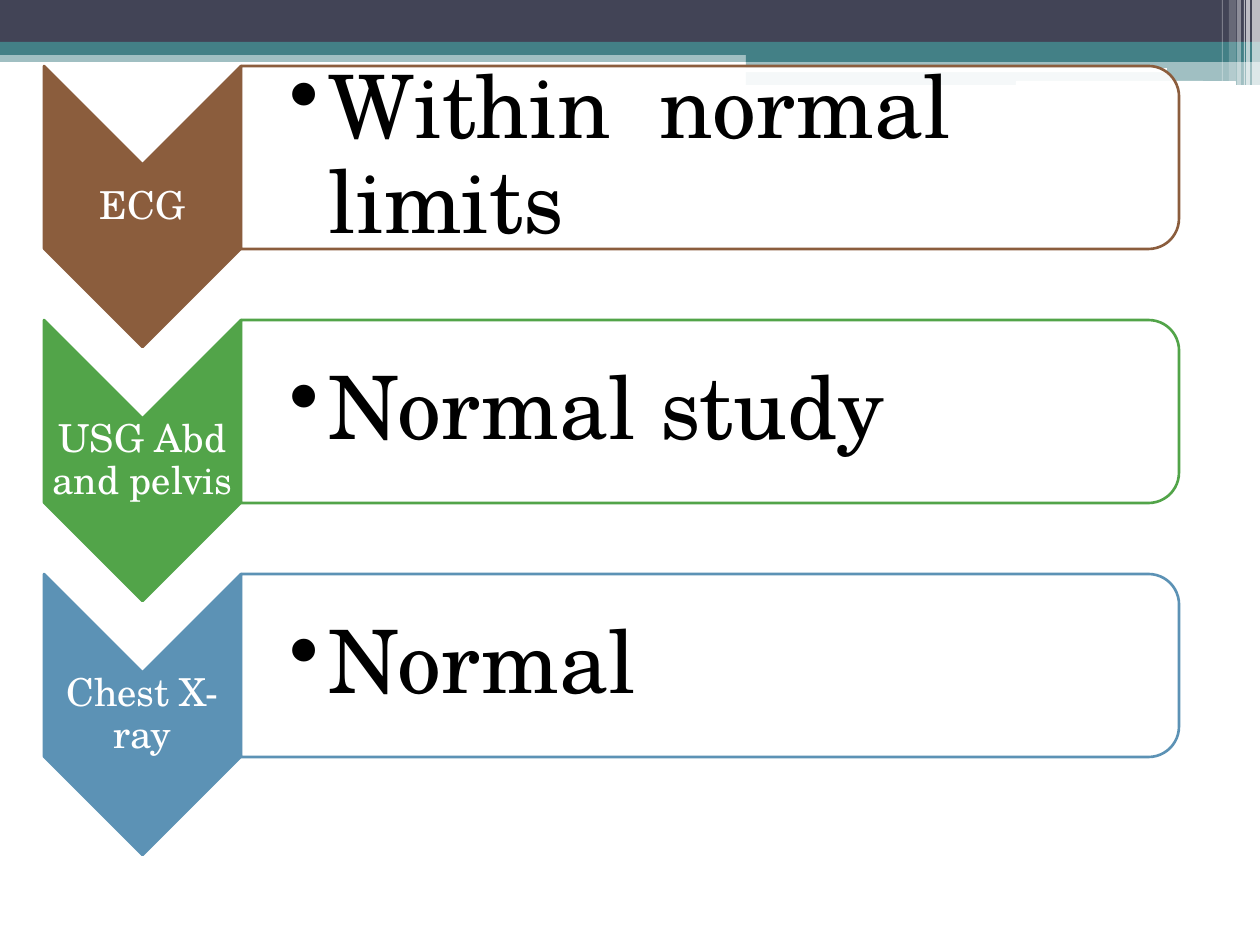
import pptx
import pptx.util
from lxml import etree
from pptx.dml.color import RGBColor
from pptx.enum.shapes import MSO_SHAPE
from pptx.enum.text import MSO_ANCHOR, PP_ALIGN
from pptx.oxml.ns import qn

FONT = "TeX Gyre Schola"
COLORS = {
    "navy": "424456", "teal": "438086", "white": "FFFFFF", "black": "000000",
    "brown": "8B5D3D", "green": "52A449", "blue": "5C92B5",
}
TESTS = [
    ("ECG", "Within  normal limits", "brown"),
    ("USG Abd and pelvis", "Normal study", "green"),
    ("Chest X-ray", "Normal", "blue"),
]
# left, top, width, height, color, opacity
BANDS = [
    (0, 50, 1260, 12, "teal", 50),
    (0, 0, 1260, 42, "navy", 100),
    (0, 42, 1260, 13, "teal", 100),
    (746, 49, 514, 13, "teal", 100),
    (746, 61, 514, 24, "teal", 50),
]
PILLS = [(745, 68, 422, 4), (1016, 81, 220, 5)]
# left, width, height, opacity
STRIPES = [
    (1252, 8, 85, 65), (1246, 4, 85, 65), (1244, 1, 85, 60),
    (1237, 4, 85, 40), (1229, 7, 81, 20), (1222, 1, 81, 30),
]
LEFT, TOP, PITCH = 44, 66, 254
ARROW_W, ARROW_H = 197, 281
PANEL_W, PANEL_H = 938, 183


def px(count):
    return pptx.util.Emu(round(count * 914400 / 126))


def rgb(name):
    return RGBColor.from_string(COLORS[name])


def draw(slide, kind, box, color, alpha=100, edge=None):
    shape = slide.shapes.add_shape(kind, *map(px, box))
    shape.shadow.inherit = False
    shape.fill.solid()
    shape.fill.fore_color.rgb = rgb(color)
    if alpha < 100:
        tint = shape.fill._xPr.find(qn("a:solidFill"))[0]
        etree.SubElement(tint, qn("a:alpha"), val=str(alpha * 1000))
    if edge:
        shape.line.color.rgb = rgb(edge)
        shape.line.width = pptx.util.Pt(1.5)
    else:
        shape.line.fill.background()
    return shape


def turn(slide, kind, box, *style):
    """Draw a shape turned by 90 degrees so that it fills the box."""
    x, y, w, h = box
    flat = (x + (w - h) / 2, y + (h - w) / 2, h, w)
    draw(slide, kind, flat, *style).rotation = 90


def write(slide, box, text, size, color, inset, pad):
    frame = slide.shapes.add_textbox(*map(px, box)).text_frame
    frame.word_wrap = True
    frame.vertical_anchor = MSO_ANCHOR.MIDDLE
    frame.margin_left = px(inset)
    frame.margin_right = frame.margin_top = frame.margin_bottom = px(pad)
    para = frame.paragraphs[0]
    para.text = text
    para.line_spacing = 0.9
    return para, size, color


def style(para, size, color):
    para.font.name = FONT
    para.font.size = pptx.util.Pt(size)
    para.font.color.rgb = rgb(color)


def bullet(para, indent):
    props = para._p.get_or_add_pPr()
    props.set("marL", str(px(indent)))
    props.set("indent", str(-px(indent)))
    etree.SubElement(props, qn("a:buChar"), char="•")


def add_row(slide, top, label, result, color):
    right = LEFT + ARROW_W
    turn(slide, MSO_SHAPE.CHEVRON, (LEFT, top, ARROW_W, ARROW_H),
         color, 100, color)
    turn(slide, MSO_SHAPE.ROUND_2_SAME_RECTANGLE,
         (right, top, PANEL_W, PANEL_H), "white", 90, color)
    name = write(slide, (LEFT, top + 99, ARROW_W, 84), label, 22, "white", 2, 2)
    name[0].alignment = PP_ALIGN.CENTER
    style(*name)
    note = write(slide, (right, top + 9, 929, 165), result, 50, "black", 49, 4)
    bullet(note[0], 39)
    style(*note)


def main():
    deck = pptx.Presentation()
    deck.slide_width, deck.slide_height = px(1260), px(945)
    slide = deck.slides.add_slide(deck.slide_layouts[6])
    for *box, color, alpha in BANDS:
        draw(slide, MSO_SHAPE.RECTANGLE, box, color, alpha)
    for box in PILLS:
        draw(slide, MSO_SHAPE.ROUNDED_RECTANGLE, box, "white")
    for left, width, height, alpha in STRIPES:
        draw(slide, MSO_SHAPE.RECTANGLE, (left, 0, width, height), "white", alpha)
    for row, test in enumerate(TESTS):
        add_row(slide, TOP + row * PITCH, *test)
    deck.save("out.pptx")


if __name__ == "__main__":
    main()
